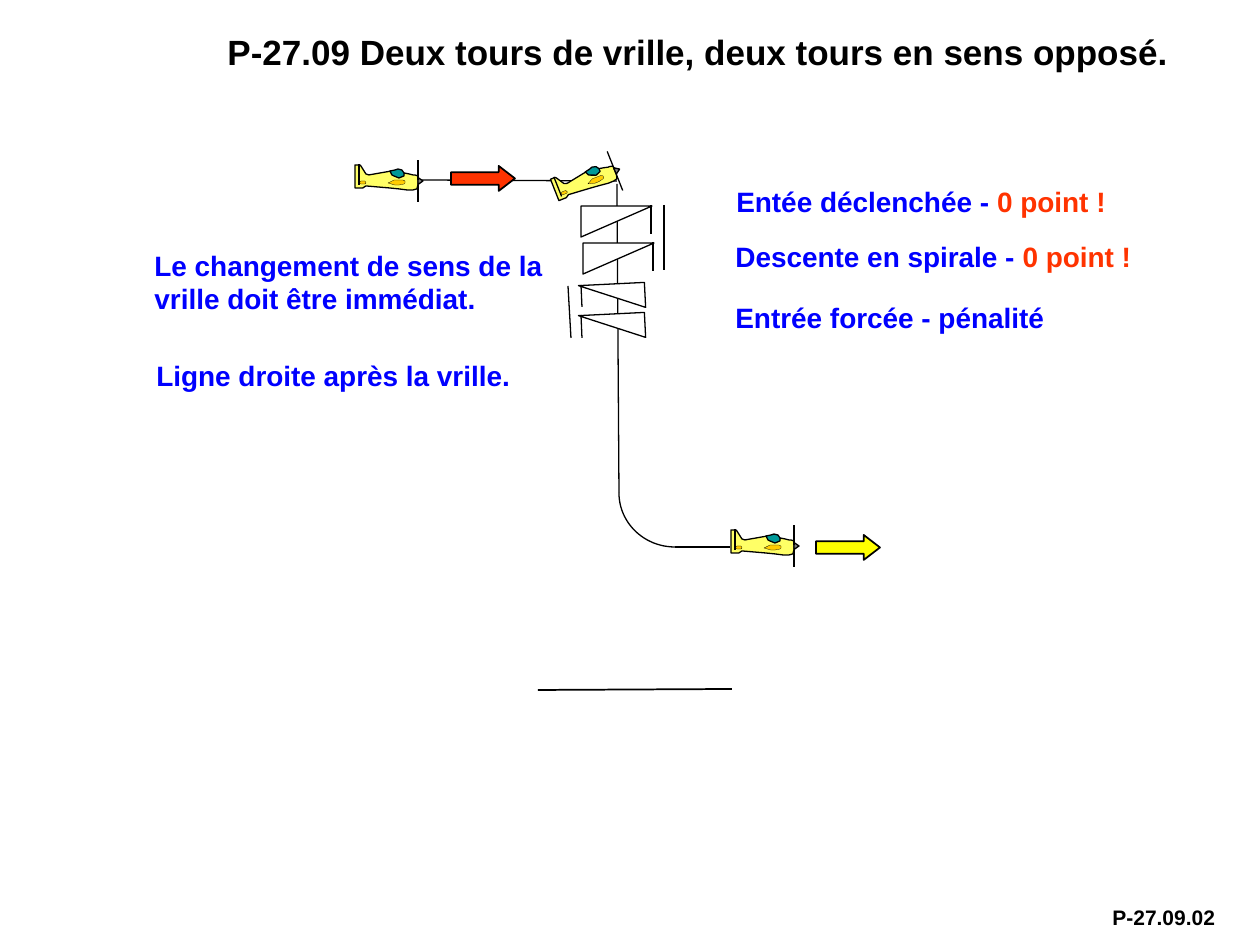
from math import cos, pi, radians, sin

from lxml import etree
from pptx import Presentation
from pptx.dml.color import RGBColor
from pptx.enum.shapes import MSO_CONNECTOR, MSO_SHAPE
from pptx.enum.text import MSO_ANCHOR, MSO_AUTO_SIZE, PP_ALIGN
from pptx.oxml.ns import qn
from pptx.util import Pt

STRAIGHT = MSO_CONNECTOR.STRAIGHT
ARROW, TRIANGLE, RIGHT_TRIANGLE = (
    MSO_SHAPE.RIGHT_ARROW, MSO_SHAPE.ISOSCELES_TRIANGLE, MSO_SHAPE.RIGHT_TRIANGLE)
TOP, MIDDLE = MSO_ANCHOR.TOP, MSO_ANCHOR.MIDDLE
LEFT, CENTER = PP_ALIGN.LEFT, PP_ALIGN.CENTER
FIT_TEXT = MSO_AUTO_SIZE.SHAPE_TO_FIT_TEXT

PX = 914400 / 126
THIN, HAIRLINE = 0.75, 0.13
COLORS = {
    "black": "000000", "white": "FFFFFF", "blue": "0000FF", "red": "FF3300",
    "yellow": "FFFF00", "body": "FFFF66", "canopy": "009999",
    "wing": "FFCC00", "spinner": "808080",
}

TITLE = "P-27.09 Deux tours de vrille, deux tours en sens opposé."
PAGE_CODE = "P-27.09.02"
PENALTY = ("0 point !", "red")
# runs, box, alignment
REMARKS = [
    ([("Entée déclenchée - ", "blue"), PENALTY], (653, 178, 536, 47), CENTER),
    ([("Descente en spirale - ", "blue"), PENALTY], (723, 233, 450, 47), LEFT),
    ([("Entrée forcée - pénalité", "blue")], (723, 294, 450, 47), LEFT),
    ([("Le changement de sens de la vrille doit être immédiat.", "blue")],
     (142, 242, 421, 81), LEFT),
    ([("Ligne droite après la vrille.", "blue")], (144, 352, 536, 47), LEFT),
]

GROUND = ((538, 690), (732, 689))
FLIGHT_PATH = [((421, 180), (617, 181)), ((617, 184), (619, 493)),
               ((675, 547), (730, 547))]
PULL_OUT = {"center": (675, 493), "radii": (56, 54)}

# left, top, width, height, rotation of each turn, then the lines beside them
SPIN_TURNS = [(579, 284, 66, 25, 177.2), (579, 314, 66, 25, 177.2),
              (601, 186, 31, 71, 90), (603, 223, 31, 71, 90)]
SPIN_LINES = [((581, 285), (582, 307)), ((581, 315), (582, 338)),
              ((568, 286), (571, 338)), ((651, 205), (651, 234)),
              ((653, 242), (653, 271)), ((664, 205), (664, 270))]

# propeller hub and pitch in degrees
PLANES = [((794, 546), 0), ((418, 181), 0), ((615, 171), -21.6)]
DIRECTION_ARROWS = [((816, 535, 64, 25), "yellow"), ((451, 166, 64, 25), "red")]

# plane parts, measured from the propeller hub
BODY = [(-14, -8), (-9, -7), (-5, -6), (-3, -6), (0, -5), (0, 4), (-1, 8),
        (-5, 9), (-11, 9), (-19, 8), (-29, 7), (-52, 5), (-55, 7), (-63, 7),
        (-63, -16), (-58, -16), (-57, -15), (-52, -7), (-49, -6), (-26, -10),
        (-25, -6), (-19, -5), (-16, -5), (-14, -7)]
CANOPY = [(-28, -10), (-26, -6), (-24, -5), (-19, -3), (-14, -5), (-14, -8),
          (-16, -11), (-20, -12), (-23, -11)]
WING = [(-30, 2), (-24, -1), (-15, -1), (-13, 0), (-13, 2), (-14, 3), (-19, 4),
        (-23, 4)]
TAILPLANE = [(-59, 2), (-57, 3), (-53, 3), (-52, 2), (-53, 0), (-57, 0)]
PLANE_PARTS = [(BODY, "body", THIN), (CANOPY, "canopy", THIN),
               (WING, "wing", HAIRLINE), (TAILPLANE, "wing", HAIRLINE)]
RUDDER = ((-59, 4), (-59, -17))
BLADES = [((0, 1), (0, 21)), ((0, -1), (0, -21))]
SPINNER_CENTER, SPINNER_SIZE = (2.5, 0), (7, 5)


def emu(lengths):
    return [round(length * PX) for length in lengths]


def rgb(color):
    return RGBColor.from_string(COLORS[color])


def paint(shape, fill, width):
    shape.shadow.inherit = False
    if fill:
        shape.fill.solid()
        shape.fill.fore_color.rgb = rgb(fill)
    else:
        shape.fill.background()
    shape.line.color.rgb = rgb("black")
    shape.line.width = Pt(width)


def add_text(shapes, runs, box, size=16, align=LEFT, anchor=TOP, spacing=None):
    frame = shapes.add_textbox(*emu(box)).text_frame
    frame.word_wrap = True
    frame.auto_size = FIT_TEXT
    frame.vertical_anchor = anchor
    paragraph = frame.paragraphs[0]
    paragraph.alignment = align
    if spacing:
        paragraph.line_spacing = spacing
    for words, color in runs:
        run = paragraph.add_run()
        run.text = words
        run.font.name = "Arial"
        run.font.size = Pt(size)
        run.font.bold = True
        run.font.color.rgb = rgb(color)


def add_line(shapes, start, end, width=THIN):
    line = shapes.add_connector(STRAIGHT, *emu(start), *emu(end))
    line.line.color.rgb = rgb("black")
    line.line.width = Pt(width)
    etree.SubElement(line._element.spPr, qn("a:effectLst"))


def add_preset(shapes, preset, box, fill, width=THIN, rotation=0):
    shape = shapes.add_shape(preset, *emu(box))
    shape.rotation = rotation
    paint(shape, fill, width)
    return shape


def add_outline(shapes, points, fill=None, width=THIN, close=True):
    first, *others = [emu(point) for point in points]
    builder = shapes.build_freeform(*first, scale=1.0)
    builder.add_line_segments(others, close=close)
    paint(builder.convert_to_shape(), fill, width)


def add_plane(shapes, hub, pitch):
    turn = radians(pitch)

    def place(point):
        """Turn a point about the hub and move it to the slide."""
        x, y = point
        return (hub[0] + x * cos(turn) - y * sin(turn),
                hub[1] + x * sin(turn) + y * cos(turn))

    lower_blade, upper_blade = BLADES
    add_line(shapes, *map(place, lower_blade))
    for points, fill, width in PLANE_PARTS:
        add_outline(shapes, [place(point) for point in points], fill, width)
    add_line(shapes, *map(place, RUDDER))
    x, y = place(SPINNER_CENTER)
    wide, high = SPINNER_SIZE
    add_preset(shapes, TRIANGLE, (x - wide / 2, y - high / 2, wide, high),
               "spinner", rotation=90 + pitch)
    add_line(shapes, *map(place, upper_blade))


def add_pull_out(shapes, center, radii, steps=24):
    """Draw the quarter turn from the vertical line to level flight."""
    angles = [pi / 2 * (1 + step / steps) for step in range(steps + 1)]
    add_outline(shapes, [(center[0] + radii[0] * cos(angle),
                          center[1] + radii[1] * sin(angle)) for angle in angles],
                close=False)


def main():
    deck = Presentation()
    deck.slide_width, deck.slide_height = emu((1260, 945))
    shapes = deck.slides.add_slide(deck.slide_layouts[6]).shapes

    add_line(shapes, *GROUND, width=1)
    add_text(shapes, [(PAGE_CODE, "black")], (1100, 903, 131, 33), size=12, spacing=0.8)
    add_text(shapes, [(TITLE, "black")], (215, 24, 1041, 55), size=20, anchor=MIDDLE)

    for start, end in FLIGHT_PATH:
        add_line(shapes, start, end)
    add_pull_out(shapes, **PULL_OUT)
    for hub, pitch in PLANES:
        add_plane(shapes, hub, pitch)
    for box, fill in DIRECTION_ARROWS:
        arrow = add_preset(shapes, ARROW, box, fill, width=1)
        arrow.adjustments[1] = 0.65

    for *box, rotation in SPIN_TURNS:
        add_preset(shapes, RIGHT_TRIANGLE, box, "white", rotation=rotation)
    for start, end in SPIN_LINES:
        add_line(shapes, start, end)

    for runs, box, align in REMARKS:
        add_text(shapes, runs, box, align=align)

    deck.save("out.pptx")


if __name__ == "__main__":
    main()
